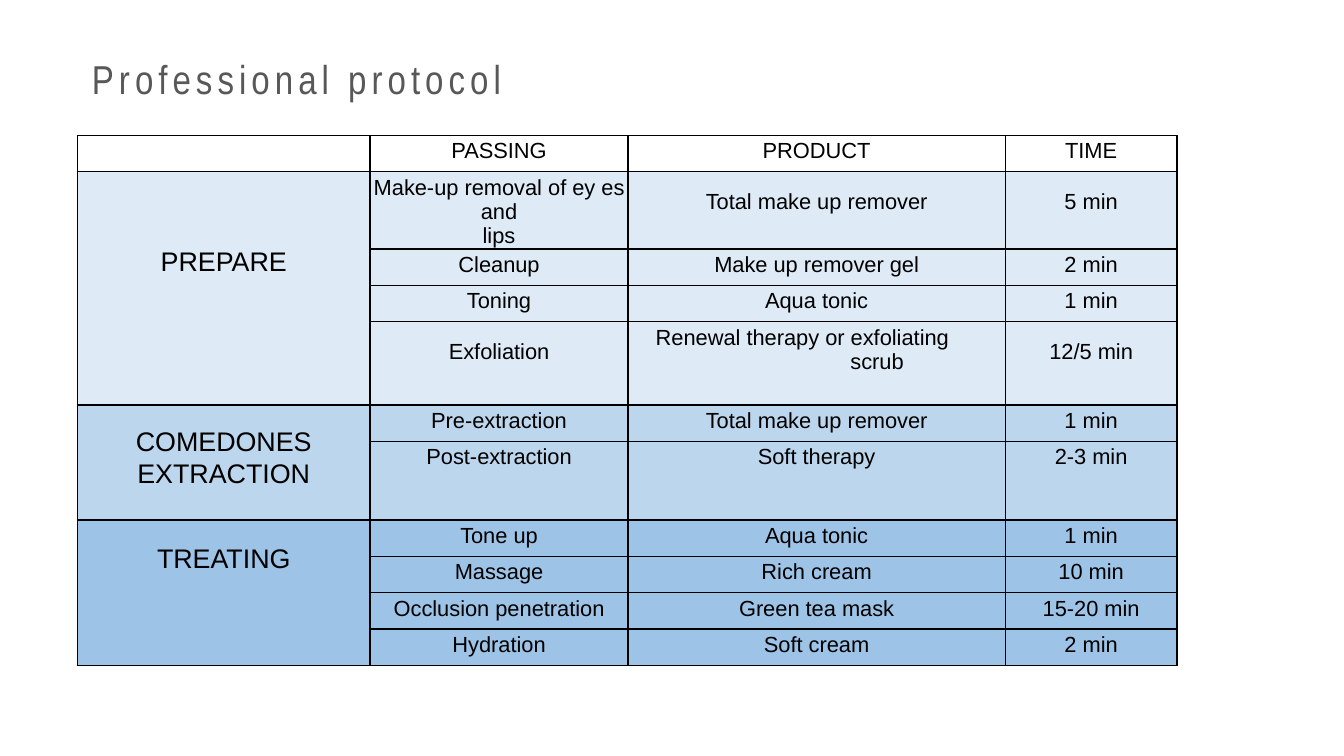
"""Build the professional protocol slide: a title and a treatment table in three phases."""
import pptx
import pptx.util
import pptx.dml.color
import pptx.enum.text
import pptx.oxml
import pptx.oxml.ns
from pptx.util import Inches

BLACK = pptx.dml.color.RGBColor(0x00, 0x00, 0x00)
WHITE = pptx.dml.color.RGBColor(0xFF, 0xFF, 0xFF)
GREY = pptx.dml.color.RGBColor(0x58, 0x58, 0x58)
PALE = pptx.dml.color.RGBColor(0xDE, 0xEB, 0xF7)
LIGHT = pptx.dml.color.RGBColor(0xBC, 0xD6, 0xED)
MEDIUM = pptx.dml.color.RGBColor(0x9D, 0xC3, 0xE6)
CENTER = pptx.enum.text.PP_ALIGN.CENTER


def set_font(p, name, size, color):
    p.font.name = name
    p.font.size = pptx.util.Pt(size)
    p.font.bold = False
    p.font.color.rgb = color


def add_borders(cell):
    tcPr = cell._tc.get_or_add_tcPr()
    for side in ("lnL", "lnR", "lnT", "lnB"):
        tcPr.append(pptx.oxml.parse_xml(
            f'<a:{side} {pptx.oxml.ns.nsdecls("a")} w="12700"><a:solidFill>'
            f'<a:srgbClr val="{BLACK}"/></a:solidFill></a:{side}>'))


prs = pptx.Presentation()
prs.slide_width = Inches(11.11)
prs.slide_height = Inches(6.25)
s = prs.slides.add_slide(prs.slide_layouts[5])

columns = [2.42, 2.13, 3.12, 1.42]
rows = [
    (0.3, WHITE, "PASSING", "PRODUCT", "TIME"),
    (0.64, PALE, "Make-up removal of ey es and\nlips", "Total make up remover", "5 min"),
    (0.3, PALE, "Cleanup", "Make up remover gel", "2 min"),
    (0.3, PALE, "Toning", "Aqua tonic", "1 min"),
    (0.69, PALE, "Exfoliation", "Renewal therapy or exfoliating scrub", "12/5 min"),
    (0.3, LIGHT, "Pre-extraction", "Total make up remover", "1 min"),
    (0.65, LIGHT, "Post-extraction", "Soft therapy", "2-3 min"),
    (0.3, MEDIUM, "Tone up", "Aqua tonic", "1 min"),
    (0.3, MEDIUM, "Massage", "Rich cream", "10 min"),
    (0.3, MEDIUM, "Occlusion penetration", "Green tea mask", "15-20 min"),
    (0.3, MEDIUM, "Hydration", "Soft cream", "2 min"),
]
lowered_cells = [(1, 2), (1, 3), (4, 1), (4, 3)]

table = s.shapes.add_table(
    len(rows), len(columns), Inches(0.64), Inches(1.12),
    Inches(sum(columns)), Inches(sum(row[0] for row in rows))).table
table.first_row = False
table.horz_banding = False
for column, width in zip(table.columns, columns):
    column.width = Inches(width)

for i, (height, color, *texts) in enumerate(rows):
    table.rows[i].height = Inches(height)
    for j, text in enumerate(["", *texts]):
        cell = table.cell(i, j)
        cell.margin_left = cell.margin_right = cell.margin_bottom = 0
        cell.margin_top = Inches(0.15 if (i, j) in lowered_cells else 0.03)
        add_borders(cell)
        cell.fill.solid()
        cell.fill.fore_color.rgb = color
        cell.text = text
        for p in cell.text_frame.paragraphs:
            p.alignment = CENTER
            set_font(p, "Arial", 13, BLACK)

for first, last in [(1, 4), (5, 6), (7, 10)]:
    table.cell(first, 0).merge(table.cell(last, 0))

scrub = table.cell(4, 2).text_frame.paragraphs[0]
scrub.alignment = pptx.enum.text.PP_ALIGN.LEFT
pPr = scrub._p.get_or_add_pPr()
pPr.set("marL", str(Inches(1.84)))
pPr.set("marR", str(Inches(0.2)))
pPr.set("indent", str(Inches(-1.61)))

title = s.shapes.title
title.left, title.top = Inches(0.76), Inches(0.49)
title.width, title.height = Inches(3.4), Inches(0.36)
title.fill.solid()
title.fill.fore_color.rgb = WHITE
tf = title.text_frame
tf.text = "Professional protocol"
tf.word_wrap = False
tf.auto_size = pptx.enum.text.MSO_AUTO_SIZE.NONE
tf.vertical_anchor = pptx.enum.text.MSO_ANCHOR.MIDDLE
tf.margin_left = tf.margin_right = tf.margin_top = tf.margin_bottom = 0
p = tf.paragraphs[0]
p.alignment = pptx.enum.text.PP_ALIGN.LEFT
p.line_spacing = 0.9
set_font(p, "Arial Narrow", 24, GREY)
p.runs[0]._r.get_or_add_rPr().set("spc", "300")

phases = [
    ("PREPARE", 1.97, 0.37),
    ("COMEDONES EXTRACTION", 3.46, 0.64),
    ("TREATING", 4.43, 0.37),
]
for text, top, height in phases:
    tf = s.shapes.add_textbox(Inches(0.89), Inches(top), Inches(1.92), Inches(height)).text_frame
    tf.word_wrap = True
    tf.text = text
    p = tf.paragraphs[0]
    p.alignment = CENTER
    set_font(p, "Arial", 16, BLACK)

prs.save("out.pptx")
